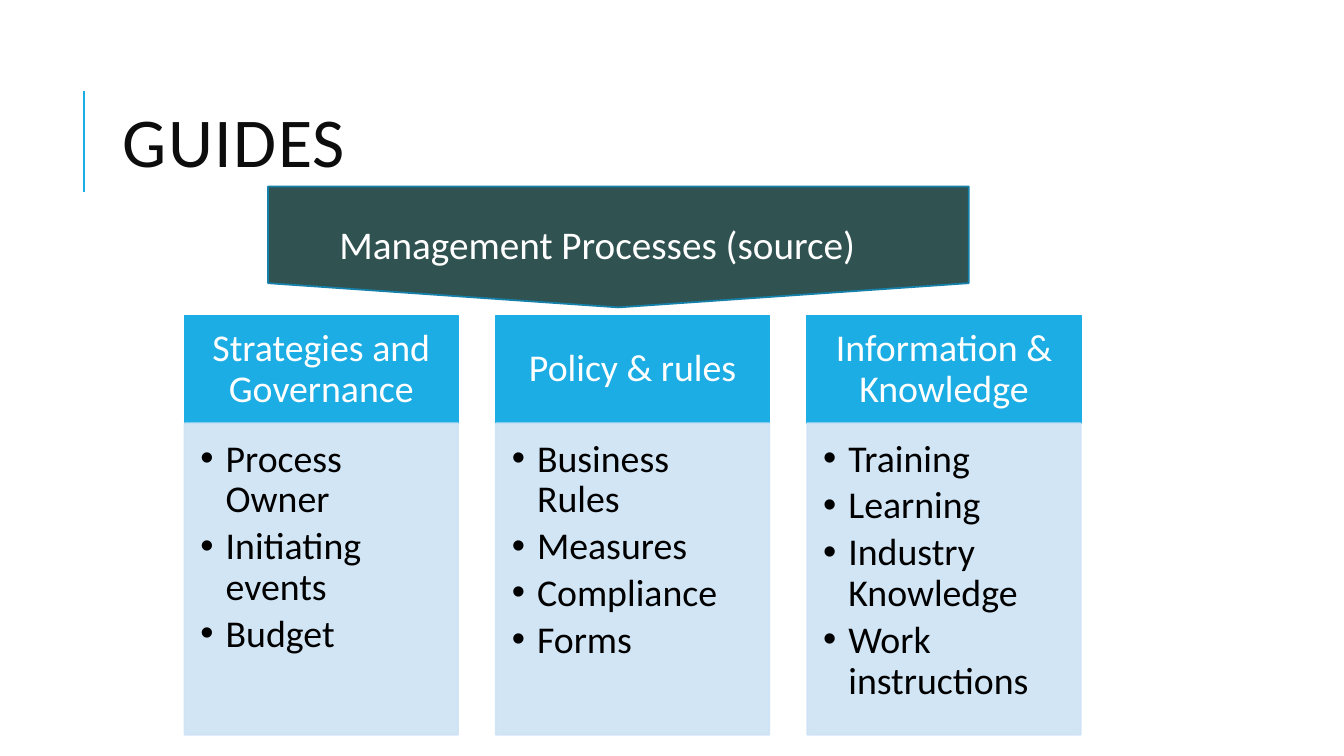
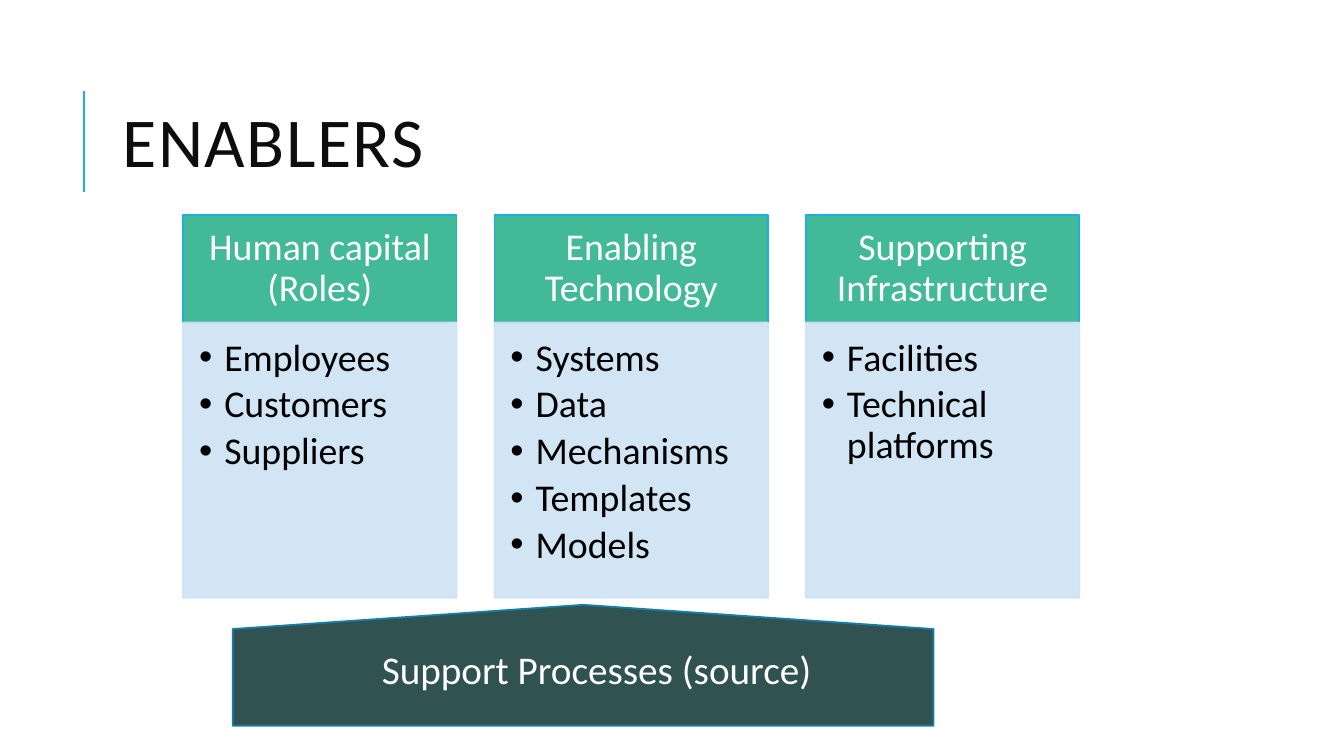
from dataclasses import dataclass

from lxml.etree import SubElement
from pptx import Presentation
from pptx.dml.color import RGBColor
from pptx.enum.shapes import MSO_CONNECTOR, MSO_SHAPE
from pptx.enum.text import MSO_ANCHOR, MSO_AUTO_SIZE, PP_ALIGN
from pptx.oxml.ns import qn
from pptx.util import Pt


@dataclass(frozen=True)
class Theme:
    font: str = "Calibri"
    title_size: float = 50
    column_size: float = 27
    banner_size: float = 28
    title: str = "0D0D0D"
    blue: str = "1CADE4"
    green: str = "42BA97"
    panel: str = "CDE3F5"
    panel_opacity: int = 90
    banner: str = "305250"
    banner_line: str = "1580A9"
    white: str = "FFFFFF"
    black: str = "000000"
    outline: float = 1.25
    accent_line: float = 1.5


THEME = Theme()
TITLE_ONLY = 5

# Column grid
COLUMN_WIDTH = 195.4
COLUMN_PITCH = 222.4
HEADER_HEIGHT = 77
HEADER_INSETS = (15.1, 8.6, 15.1, 8.6)
PANEL_INSETS = (11.4, 11.4, 15.1, 17.1)
BULLET_INDENT = 18

BANNER_SIZE = (500.4, 86.4)

GUIDES = [
    ("Strategies and Governance", ["Process Owner", "Initiating events", "Budget"]),
    ("Policy & rules", ["Business Rules", "Measures", "Compliance", "Forms"]),
    ("Information & Knowledge",
     ["Training", "Learning", "Industry Knowledge", "Work instructions"]),
]
ENABLERS = [
    ("Human capital (Roles)", ["Employees", "Customers", "Suppliers"]),
    ("Enabling Technology",
     ["Systems", "Data", "Mechanisms", "Templates", "Models"]),
    ("Supporting Infrastructure", ["Facilities", "Technical platforms"]),
]


def rgb(color):
    return RGBColor.from_string(color)


def set_frame(frame, anchor, insets=(7.2, 3.6, 7.2, 3.6)):
    frame.word_wrap = True
    frame.auto_size = MSO_AUTO_SIZE.NONE
    frame.vertical_anchor = anchor
    (frame.margin_left, frame.margin_top,
     frame.margin_right, frame.margin_bottom) = map(Pt, insets)


def add_run(paragraph, text, size, color):
    run = paragraph.add_run()
    run.text = text
    run.font.name = THEME.font
    run.font.size = Pt(size)
    run.font.color.rgb = rgb(color)
    return run


def add_bullet(paragraph):
    properties = paragraph._p.get_or_add_pPr()
    properties.set("marL", str(Pt(BULLET_INDENT)))
    properties.set("indent", str(-Pt(BULLET_INDENT)))
    SubElement(properties, qn("a:buFont"), typeface="Arial")
    SubElement(properties, qn("a:buChar"), char="•")


def set_opacity(shape, percent):
    for color in shape._element.spPr.iter(qn("a:srgbClr")):
        SubElement(color, qn("a:alpha"), val=str(percent * 1000))


def add_block(slide, kind, left, top, width, height, fill, line):
    shape = slide.shapes.add_shape(kind, Pt(left), Pt(top), Pt(width), Pt(height))
    shape.shadow.inherit = False
    shape.fill.solid()
    shape.fill.fore_color.rgb = rgb(fill)
    shape.line.color.rgb = rgb(line)
    shape.line.width = Pt(THEME.outline)
    return shape


def add_accent_line(slide):
    line = slide.shapes.add_connector(
        MSO_CONNECTOR.STRAIGHT, Pt(60), Pt(137), Pt(60), Pt(65))
    line.line.color.rgb = rgb(THEME.blue)
    line.line.width = Pt(THEME.accent_line)
    SubElement(line._element.spPr, qn("a:effectLst"))


def add_titled_slide(presentation, text):
    slide = presentation.slides.add_slide(presentation.slide_layouts[TITLE_ONLY])
    title = slide.shapes.title
    title.left, title.top, title.width, title.height = map(
        Pt, (80.6, 46.1, 765.4, 118.1))
    set_frame(title.text_frame, MSO_ANCHOR.MIDDLE)
    paragraph = title.text_frame.paragraphs[0]
    paragraph.alignment = PP_ALIGN.LEFT
    paragraph.line_spacing = 0.8
    run = add_run(paragraph, text, THEME.title_size, THEME.title)
    run.font._element.set("spc", "100")
    add_accent_line(slide)
    return slide


def add_header(slide, left, top, text, fill):
    header = add_block(slide, MSO_SHAPE.RECTANGLE, left, top,
                       COLUMN_WIDTH, HEADER_HEIGHT, fill, THEME.blue)
    set_frame(header.text_frame, MSO_ANCHOR.MIDDLE, HEADER_INSETS)
    paragraph = header.text_frame.paragraphs[0]
    paragraph.alignment = PP_ALIGN.CENTER
    paragraph.line_spacing = 0.9
    add_run(paragraph, text, THEME.column_size, THEME.white)


def add_panel(slide, left, top, height, items):
    panel = add_block(slide, MSO_SHAPE.RECTANGLE, left, top,
                      COLUMN_WIDTH, height, THEME.panel, THEME.panel)
    set_opacity(panel, THEME.panel_opacity)
    frame = panel.text_frame
    set_frame(frame, MSO_ANCHOR.TOP, PANEL_INSETS)
    for index, item in enumerate(items):
        paragraph = frame.add_paragraph() if index else frame.paragraphs[0]
        paragraph.alignment = PP_ALIGN.LEFT
        paragraph.line_spacing = 0.9
        paragraph.space_after = Pt(4.2)
        add_bullet(paragraph)
        add_run(paragraph, item, THEME.column_size, THEME.black)


def add_columns(slide, left, top, panel_height, header_fill, columns):
    for index, (heading, items) in enumerate(columns):
        column_left = left + index * COLUMN_PITCH
        add_header(slide, column_left, top, heading, header_fill)
        add_panel(slide, column_left, top + HEADER_HEIGHT, panel_height, items)


def add_banner(slide, left, top, text, text_box, rotation=0):
    banner = add_block(slide, MSO_SHAPE.FLOWCHART_OFFPAGE_CONNECTOR, left, top,
                       *BANNER_SIZE, THEME.banner, THEME.banner_line)
    banner.rotation = rotation
    # The label stays upright when the banner is turned
    label = slide.shapes.add_textbox(*map(Pt, text_box))
    set_frame(label.text_frame, MSO_ANCHOR.TOP)
    add_run(label.text_frame.paragraphs[0], text, THEME.banner_size, THEME.white)


def main():
    presentation = Presentation()
    presentation.slide_width = Pt(960)
    presentation.slide_height = Pt(540)

    # Guides: banner points down at the columns
    guides = add_titled_slide(presentation, "GUIDES")
    add_columns(guides, 131.8, 225.4, 222.5, THEME.blue, GUIDES)
    add_banner(guides, 191.5, 133.2, "Management Processes (source)",
               (235.4, 154.1, 404.6, 41))

    # Enablers: banner points up at the columns
    enablers = add_titled_slide(presentation, "ENABLERS")
    add_columns(enablers, 130.8, 153.4, 196.6, THEME.green, ENABLERS)
    add_banner(enablers, 166.3, 432, "Support Processes (source)",
               (265.7, 457.2, 357.8, 41), rotation=180)

    presentation.save("out.pptx")


if __name__ == "__main__":
    main()
